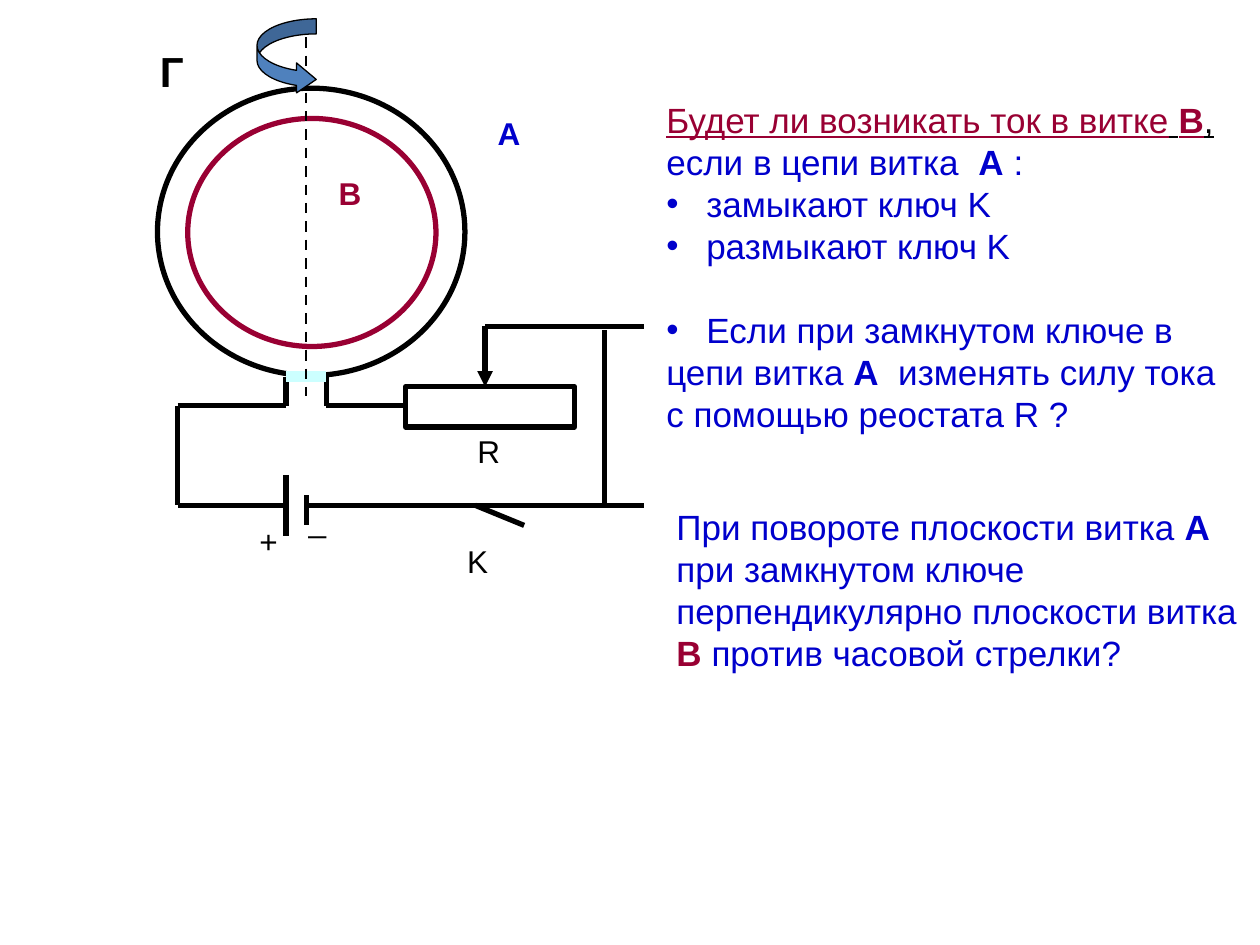
from collections import namedtuple
from pptx import Presentation
from pptx.dml.color import RGBColor
from pptx.enum.dml import MSO_LINE
from pptx.enum.shapes import MSO_CONNECTOR, MSO_SHAPE
from pptx.util import Inches, Pt
from lxml.etree import SubElement
from pptx.oxml.ns import qn

Theme = namedtuple("Theme", "font black blue red cyan steel body label head")
theme = Theme("Arial", "000000", "0000CC", "990033", "CCFFFF", "4F81BD", 20, 18, 24)

deck = Presentation()
deck.slide_width, deck.slide_height = Inches(10), Inches(7.5)
slide = deck.slides.add_slide(deck.slide_layouts[6])
shapes = slide.shapes


def add_text(left, top, width, height, paras, size):
    box = shapes.add_textbox(Inches(left), Inches(top), Inches(width), Inches(height))
    frame = box.text_frame
    frame.word_wrap = True
    for i, (mark, gap, runs) in enumerate(paras):
        para = frame.paragraphs[0] if i == 0 else frame.add_paragraph()
        para.space_before = Pt(gap)
        if mark:
            props = para._p.get_or_add_pPr()
            props.set("marL", str(Inches(mark)))
            props.set("indent", str(-Inches(mark)))
            SubElement(props, qn("a:buFont")).set("typeface", theme.font)
            SubElement(props, qn("a:buChar")).set("char", "•")
        for words, color, style in runs:
            run = para.add_run()
            run.text = words
            run.font.name = theme.font
            run.font.size = Pt(size)
            run.font.color.rgb = RGBColor.from_string(color)
            run.font.bold = "b" in style
            run.font.underline = "u" in style


def add_line(x1, y1, x2, y2, color=theme.black, width=3):
    wire = shapes.add_connector(
        MSO_CONNECTOR.STRAIGHT, Inches(x1), Inches(y1), Inches(x2), Inches(y2))
    wire.line.color.rgb = RGBColor.from_string(color)
    wire.line.width = Pt(width)
    SubElement(wire._element.spPr, qn("a:effectLst"))
    return wire


blue, red, black = theme.blue, theme.red, theme.black
dot = 0.24
add_text(5.19, 0.73, 5, 3.27, [
    (0, 0, [("Будет ли возникать ток в витке", red, "u"), (" ", black, "u"),
            ("В", red, "bu"), (",", black, "u")]),
    (0, 0, [("если в цепи витка  ", blue, ""), ("А ", blue, "b"), (":", blue, "")]),
    (dot, 0, [(" замыкают ключ K", blue, "")]),
    (dot, 0, [(" размыкают ключ K", blue, "")]),
    (dot, 24, [(" Если при замкнутом ключе в", blue, "")]),
    (0, 0, [("цепи витка ", blue, ""), ("А", blue, "b"),
            ("  изменять силу тока", blue, "")]),
    (0, 0, [("с помощью реостата R ?", blue, "")]),
], theme.body)
add_text(5.27, 3.96, 4.65, 1.43, [
    (0, 0, [("При повороте плоскости витка ", blue, ""), ("А ", blue, "b"),
            ("при замкнутом ключе", blue, "")]),
    (0, 0, [("перпендикулярно плоскости витка ", blue, ""), ("В ", red, "b"),
            ("против часовой стрелки?", blue, "")]),
], theme.body)

for kind, left, top, width, height, color in [
    (MSO_SHAPE.OVAL, 1.25, 0.7, 2.44, 2.28, black),
    (MSO_SHAPE.OVAL, 1.49, 0.94, 1.97, 1.81, red),
    (MSO_SHAPE.RECTANGLE, 3.22, 3.07, 1.34, 0.32, black),
]:
    part = shapes.add_shape(kind, Inches(left), Inches(top), Inches(width), Inches(height))
    part.shadow.inherit = False
    part.fill.background()
    part.line.color.rgb = RGBColor.from_string(color)
    part.line.width = Pt(3)

for ends in [
    (2.59, 2.99, 2.59, 3.22), (2.27, 2.99, 2.27, 3.22), (2.59, 3.22, 3.22, 3.22),
    (4.8, 2.62, 4.8, 4.03), (2.43, 4.01, 5.11, 4.01), (3.77, 4.01, 4.16, 4.17),
    (2.43, 3.93, 2.43, 4.17), (2.27, 3.77, 2.27, 4.25), (1.41, 4.01, 2.27, 4.01),
    (1.41, 3.22, 1.41, 4.01), (1.41, 3.22, 2.27, 3.22), (3.85, 2.59, 5.11, 2.59),
]:
    add_line(*ends)
add_line(2.27, 2.99, 2.59, 2.99, theme.cyan, 6)
slider = add_line(3.85, 2.59, 3.85, 3.07)
SubElement(slider.line._get_or_add_ln(), qn("a:tailEnd")).set("type", "triangle")
axis = add_line(2.43, 0.15, 2.43, 3.14, black, 1.5)
axis.line.dash_style = MSO_LINE.DASH

turn = shapes.add_shape(
    MSO_SHAPE.CURVED_RIGHT_ARROW, Inches(2.04), Inches(0.15), Inches(0.47), Inches(0.6))
for i, value in enumerate((0.254, 0.507, 0.333)):
    turn.adjustments[i] = value
turn.shadow.inherit = False
turn.fill.solid()
turn.fill.fore_color.rgb = RGBColor.from_string(theme.steel)
turn.line.color.rgb = RGBColor.from_string(black)
turn.line.width = Pt(0.75)

for words, left, top, width, color, style, size in [
    ("_", 2.35, 3.93, 0.32, black, "", theme.label),
    ("+", 1.96, 4.09, 0.39, black, "", theme.label),
    ("A", 3.85, 0.86, 0.38, blue, "b", theme.label),
    ("B", 2.59, 1.33, 0.47, red, "b", theme.label),
    ("Г", 1.17, 0.31, 0.4, black, "b", theme.head),
    ("R", 3.69, 3.38, 0.47, black, "", theme.label),
    ("K", 3.61, 4.25, 0.41, black, "", theme.label),
]:
    add_text(left, top, width, 0.4, [(0, 0, [(words, color, style)])], size)

deck.save("out.pptx")
